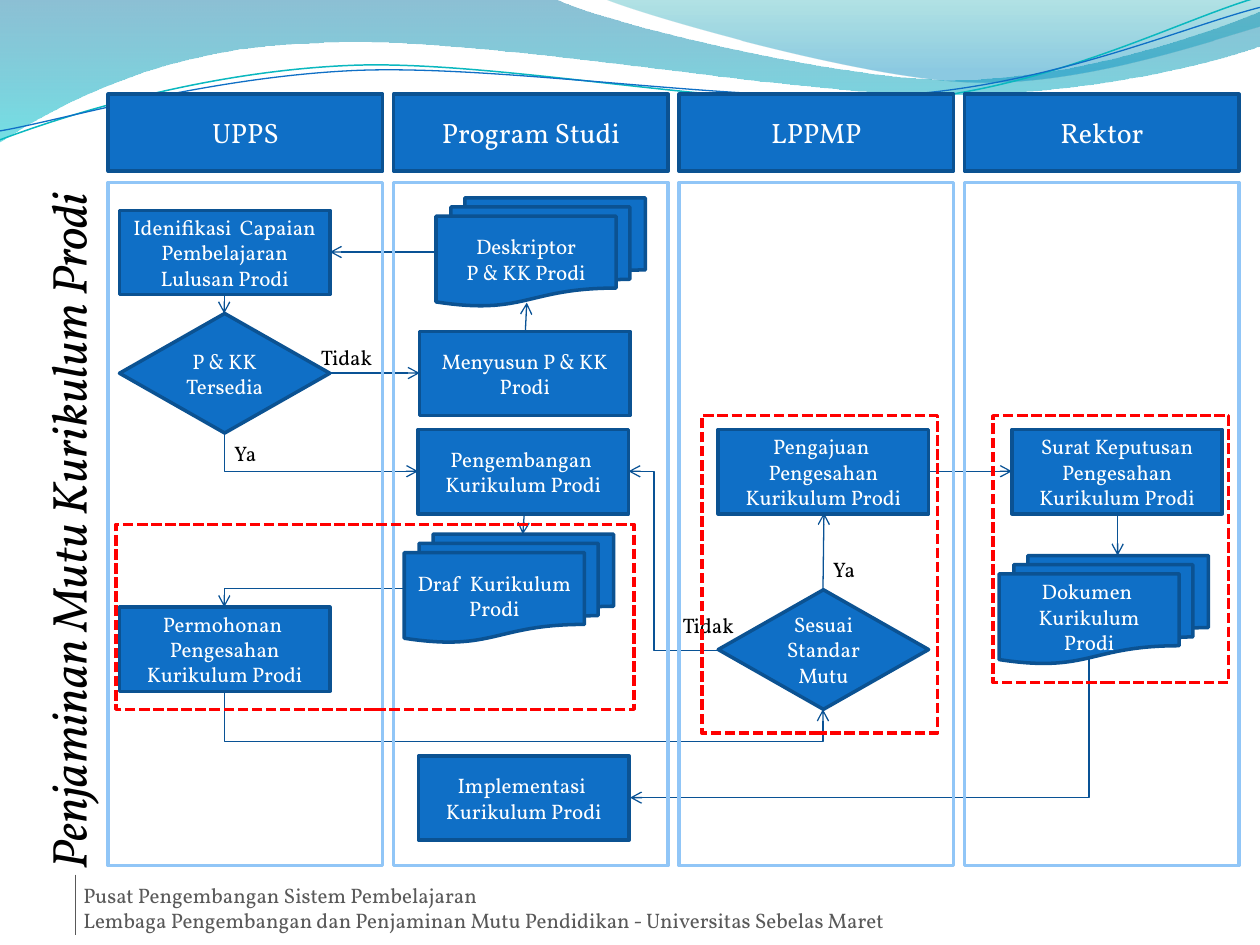
from lxml import etree
from pptx import Presentation
from pptx.dml.color import RGBColor
from pptx.enum.dml import MSO_LINE
from pptx.enum.shapes import MSO_CONNECTOR, MSO_SHAPE
from pptx.enum.text import MSO_ANCHOR, MSO_AUTO_SIZE, PP_ALIGN
from pptx.oxml.ns import qn
from pptx.util import Cm, Pt

RECT, DIAMOND = MSO_SHAPE.RECTANGLE, MSO_SHAPE.DIAMOND
DOCUMENTS = MSO_SHAPE.FLOWCHART_MULTIDOCUMENT
STRAIGHT, ELBOW = MSO_CONNECTOR.STRAIGHT, MSO_CONNECTOR.ELBOW
DASH = MSO_LINE.SQUARE_DOT
LEFT, CENTER = PP_ALIGN.LEFT, PP_ALIGN.CENTER
TOP, MIDDLE = MSO_ANCHOR.TOP, MSO_ANCHOR.MIDDLE

FONT = "Vollkorn"
BLUE = RGBColor(0x0F, 0x6F, 0xC6)
DARK_BLUE = RGBColor(0x0B, 0x52, 0x92)
ARROW_BLUE = RGBColor(0x09, 0x52, 0x95)
LANE_BLUE = RGBColor(0x91, 0xC6, 0xF7)
RED = RGBColor(0xFF, 0x00, 0x00)
WHITE = RGBColor(0xFF, 0xFF, 0xFF)
BLACK = RGBColor(0x00, 0x00, 0x00)
GRAY = RGBColor(0x59, 0x59, 0x59)
TEAL = RGBColor(0x0A, 0xB8, 0xBF)

FILLED_WAVES = [
    ((0, 0),
     [(11.18, -0.03), (12.09, 0.43, 16.87, 1.6, 19.25, 1.6),
      (21.67, 1.6, 24.33, 0.66, 25.4, 0.23), (25.43, 0.91),
      (24.97, 1.12, 22.1, 1.93, 18.95, 1.91), (15.8, 1.91, 9.7, 0.71, 6.53, 0.86),
      (3.28, 0.91, 1.17, 2.11, -0.03, 2.87), (0, 0)],
     [(0, RGBColor(0x00, 0x74, 0xA1), 45), (1, RGBColor(0x00, 0xC6, 0xCF), 55)]),
    ((12.17, -0.03),
     [(12.93, 0.3, 17.32, 1.57, 19.53, 1.65), (21.74, 1.75, 24.41, 0.81, 25.4, 0.53),
      (25.4, 0), (12.17, -0.03)],
     [(0, RGBColor(0x00, 0xA1, 0xA9), 30), (0.8, RGBColor(0x00, 0x8B, 0xBF), 45)]),
]
LINE_WAVES = [
    ((0, 2.82),
     [(1.22, 2.36, 4.01, 1.45, 7.04, 1.32), (10.03, 1.19, 15.06, 2.26, 18.11, 2.03),
      (21.16, 1.8, 23.83, 0.38, 25.35, -0.05)], TEAL, 0.85),
    ((0, 2.64),
     [(1.19, 2.44, 4.17, 1.55, 7.19, 1.42), (10.24, 1.3, 15.16, 2.13, 18.21, 1.91),
      (21.23, 1.7, 23.9, 0.53, 25.4, 0.15)], BLUE, 0.75),
]
LANES = ["UPPS", "Program Studi", "LPPMP", "Rektor"]
SIZES = {RECT: (4.24, 1.7), DIAMOND: (4.24, 2.41), DOCUMENTS: (4.22, 2.18)}
STEPS = [
    (RECT, 0.23, 2.34, ["Idenifikasi  Capaian Pembelajaran Lulusan Prodi"]),
    (DIAMOND, 0.23, 4.42, ["P & KK Tersedia"]),
    (RECT, 6.25, 6.76, ["Pengembangan  Kurikulum Prodi"]),
    (DIAMOND, 12.3, 9.99, ["Sesuai Standar Mutu"]),
    (RECT, 12.3, 6.76, ["Pengajuan  Pengesahan Kurikulum Prodi"]),
    (RECT, 18.22, 6.76, ["Surat Keputusan Pengesahan Kurikulum Prodi"]),
    (RECT, 6.28, 4.78, ["Menyusun P & KK Prodi"]),
    (DOCUMENTS, 6.61, 2.09, ["Deskriptor", "P & KK Prodi"]),
    (DOCUMENTS, 5.97, 8.87, ["Draf  Kurikulum Prodi"]),
    (RECT, 0.23, 10.34, ["Permohonan  Pengesahan Kurikulum Prodi"]),
    (DOCUMENTS, 17.96, 9.3, ["Dokumen  Kurikulum Prodi"]),
    (RECT, 6.26, 13.34, ["Implementasi  Kurikulum Prodi"]),
]
ARROWS = [
    (2.34, 4.04, 2.34, 4.42), (4.47, 5.62, 6.28, 5.62),
    (8.41, 4.78, 8.44, 4.2), (6.61, 3.18, 4.47, 3.18),
    (8.39, 8.44, 8.36, 8.87), (14.41, 9.99, 14.43, 8.44),
    (16.54, 7.6, 18.22, 7.6), (20.35, 8.44, 20.35, 9.3),
]
ELBOWS = [
    ((2.34, 6.84, 6.25, 7.6), 270, "flipH", None),
    ((12.3, 11.21, 10.49, 7.6), 180, None, 71800),
    ((2.34, 12.04, 14.41, 12.4), 270, "flipH", 279400),
    ((5.97, 9.96, 2.34, 10.34), 180, "flipV", None),
    ((19.77, 11.38, 10.52, 14.18), 90, None, None),
]
LABELS = [("Ya", 2.29, 6.86), ("Tidak", 4.04, 4.93), ("Tidak", 11.33, 10.32), ("Ya", 14.36, 9.2)]
HIGHLIGHTS = [(17.84, 6.48, 4.75, 5.38), (11.97, 6.48, 4.75, 6.4), (0.16, 8.67, 10.44, 3.73)]


def write(frame, lines, size, color, align=LEFT, anchor=TOP, italic=False):
    frame.word_wrap = True
    frame.vertical_anchor = anchor
    for index, text in enumerate(lines):
        para = frame.add_paragraph() if index else frame.paragraphs[0]
        para.alignment = align
        span = para.add_run()
        span.text = text
        span.font.name, span.font.size = FONT, Pt(size)
        span.font.color.rgb, span.font.italic = color, italic


def add_box(page, kind, area, line, fill=None):
    box = page.shapes.add_shape(kind, *map(Cm, area))
    box.shadow.inherit = False
    box.line.color.rgb, box.line.width = line, Pt(2)
    if fill is None:
        box.fill.background()
    else:
        box.fill.solid()
        box.fill.fore_color.rgb = fill
    return box


def add_line(page, kind, ends, color, width, arrow=True):
    line = page.shapes.add_connector(kind, *map(Cm, ends))
    line.line.color.rgb, line.line.width = color, Pt(width)
    if arrow:
        etree.SubElement(line.line._get_or_add_ln(), qn("a:tailEnd"), type="arrow")
    etree.SubElement(line._element.spPr, qn("a:effectLst"))
    return line


def add_elbow(page, ends, turn, flip, bend):
    x1, y1, x2, y2 = ends
    width, height = abs(x2 - x1), abs(y2 - y1)
    if turn in (90, 270):
        width, height = height, width
    left, top = (x1 + x2 - width) / 2, (y1 + y2 - height) / 2
    line = add_line(page, ELBOW, (left, top, left + width, top + height), ARROW_BLUE, 0.75)
    frame = line._element.spPr.find(qn("a:xfrm"))
    frame.set("rot", str(turn * 60000))
    if flip:
        frame.set(flip, "1")
    geometry = line._element.spPr.find(qn("a:prstGeom"))
    if bend is None:
        geometry.set("prst", "bentConnector2")
    else:
        guides = geometry.find(qn("a:avLst"))
        etree.SubElement(guides, qn("a:gd"), name="adj1", fmla=f"val {bend}")


def add_wave(page, start, segments, close):
    points = [pair for segment in segments for pair in zip(segment[::2], segment[1::2])]
    builder = page.shapes.build_freeform(Cm(start[0]), Cm(start[1]))
    builder.add_line_segments([(Cm(x), Cm(y)) for x, y in points], close=close)
    wave = builder.convert_to_shape()
    wave.shadow.inherit = False
    steps = iter(list(wave._element.spPr.iter(qn("a:lnTo"))))
    for segment in segments:
        first, *others = [next(steps) for _ in segment[::2]]
        if others:
            curve = etree.Element(qn("a:cubicBezTo"))
            first.addprevious(curve)
            for step in (first, *others):
                curve.append(step[0])
                step.getparent().remove(step)
    return wave


def build_waves(page):
    for start, segments, stops in FILLED_WAVES:
        wave = add_wave(page, start, segments, True)
        wave.line.fill.background()
        wave.fill.gradient()
        wave.fill.gradient_angle = 270
        for stop, (position, color, _) in zip(wave.fill.gradient_stops, stops):
            stop.position, stop.color.rgb = position, color
        for node, (_, _, opacity) in zip(wave._element.spPr.iter(qn("a:srgbClr")), stops):
            etree.SubElement(node, qn("a:alpha"), val=str(opacity * 1000))
    for start, segments, color, width in LINE_WAVES:
        wave = add_wave(page, start, segments, False)
        wave.fill.background()
        wave.line.color.rgb, wave.line.width = color, Pt(width)


def build_title(page, left, top, width, height):
    title = page.shapes.title
    title.left, title.top, title.width, title.height = map(Cm, (left, top, width, height))
    title.rotation = 270
    title.text_frame.auto_size = MSO_AUTO_SIZE.NONE
    write(title.text_frame, ["Penjaminan Mutu Kurikulum Prodi"], 28, BLACK, italic=True)


def build_footer(page, left, top, width, height):
    box = page.shapes.add_textbox(*map(Cm, (left + 0.16, top + 0.03, width - 0.16, height)))
    box.text_frame.margin_left, box.text_frame.margin_right = 0, Cm(0.05)
    write(box.text_frame, ["Pusat Pengembangan Sistem Pembelajaran",
                           "Lembaga Pengembangan dan Penjaminan Mutu Pendidikan - "
                           "Universitas Sebelas Maret"], 12, GRAY)
    add_line(page, STRAIGHT, (left, top, left, top + height), GRAY, 1, arrow=False)


def build_flowchart(page, left, top, width, height):
    def shift(ends):
        return tuple(value + origin for value, origin in zip(ends, (left, top) * 2))

    for kind, x, y, lines in STEPS:
        step = add_box(page, kind, (left + x, top + y, *SIZES[kind]), DARK_BLUE, BLUE)
        write(step.text_frame, lines, 12, WHITE, CENTER, MIDDLE)
    for ends in ARROWS:
        add_line(page, STRAIGHT, shift(ends), ARROW_BLUE, 0.75)
    for ends, turn, flip, bend in ELBOWS:
        add_elbow(page, shift(ends), turn, flip, bend)
    for text, x, y in LABELS:
        label = page.shapes.add_textbox(*map(Cm, (left + x, top + y, 1.98, 0.76)))
        write(label.text_frame, [text], 12, BLACK)
    gap, head, body = 0.22, 1.55, 1.78
    lane_width = (width - gap * (len(LANES) - 1)) / len(LANES)
    for index, name in enumerate(LANES):
        x = left + index * (lane_width + gap)
        add_box(page, RECT, (x, top + body, lane_width, height - body), LANE_BLUE)
        header = add_box(page, RECT, (x, top, lane_width, head), DARK_BLUE, BLUE)
        write(header.text_frame, [name], 16, WHITE, CENTER, MIDDLE)
    for x, y, across, down in HIGHLIGHTS:
        frame = add_box(page, RECT, (left + x, top + y, across, down), RED)
        frame.line.dash_style = DASH


def main():
    deck = Presentation()
    deck.slide_width, deck.slide_height = Cm(25.4), Cm(19.05)
    page = deck.slides.add_slide(deck.slide_layouts[5])
    build_waves(page)
    build_footer(page, 1.52, 17.63, 21.98, 1.22)
    build_flowchart(page, 2.18, 1.9, 22.8, 15.55)
    build_title(page, -9.63, 5.18, 22.86, 2.34)
    deck.save("out.pptx")


if __name__ == "__main__":
    main()
